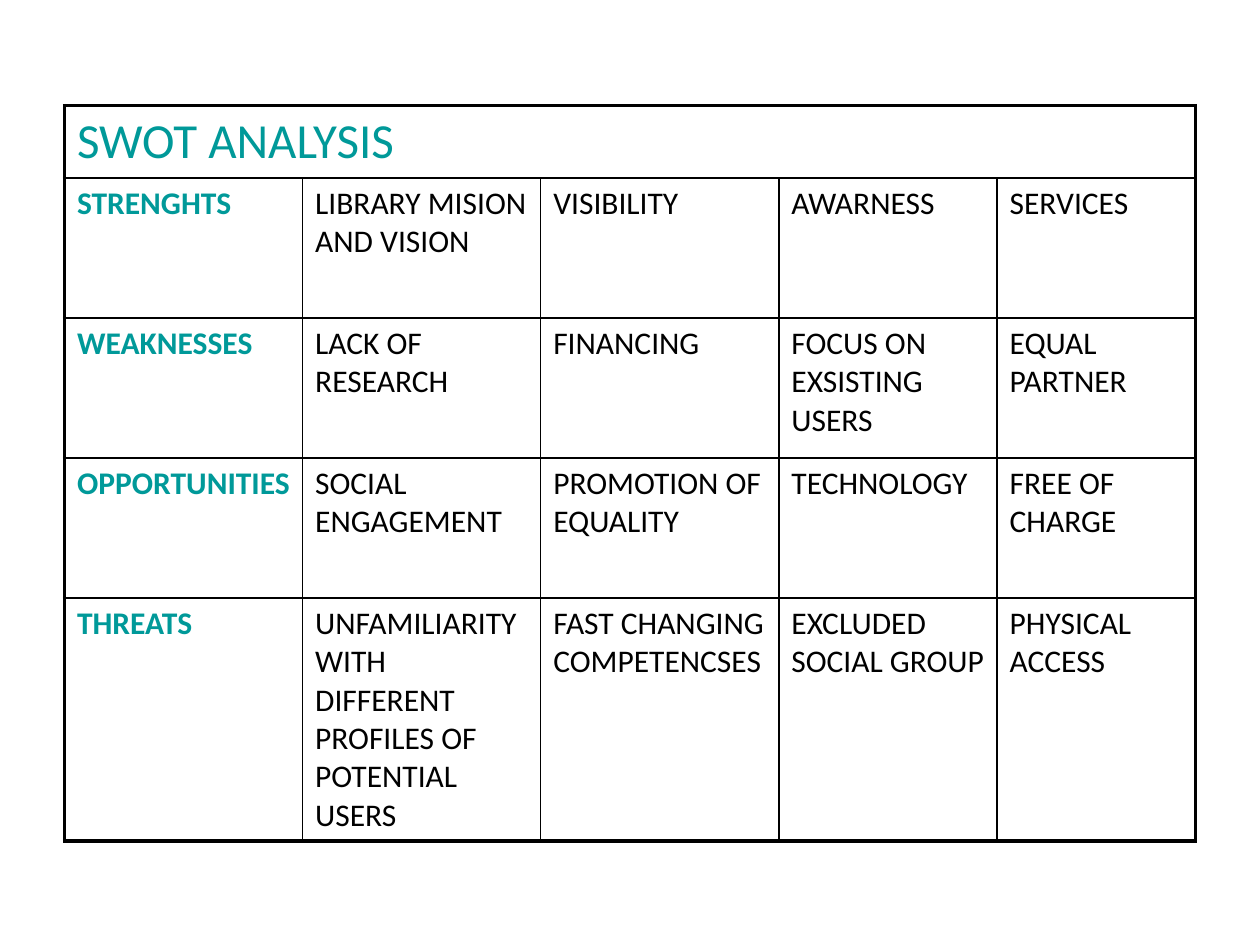
from dataclasses import dataclass

from lxml.etree import SubElement
from pptx import Presentation
from pptx.dml.color import RGBColor
from pptx.oxml.ns import qn
from pptx.table import Table, _Cell
from pptx.util import Cm, Pt

COLOURS = {"heading": "009999", "body": "000000", "border": "000000"}
FONT = "Calibri"
COLUMN_WIDTHS = [4.8, 4.8, 4.8, 4.4, 4.0]
ROW_HEIGHTS = [1.4, 2.82, 2.82, 2.82, 4.9]
OUTER_LINE, INNER_LINE = 2.25, 1


@dataclass(frozen=True)
class TextStyle:
    size: int
    colour: str
    bold: bool = False


@dataclass(frozen=True)
class SwotRow:
    heading: str
    points: tuple[str, ...]


TITLE = TextStyle(28, "heading")
HEADING = TextStyle(18, "heading", bold=True)
BODY = TextStyle(18, "body")

SWOT_ROWS = [
    SwotRow("STRENGHTS", ("LIBRARY MISION AND VISION", "VISIBILITY", "AWARNESS", "SERVICES")),
    SwotRow("WEAKNESSES", ("LACK OF RESEARCH", "FINANCING", "FOCUS ON EXSISTING USERS", "EQUAL PARTNER")),
    SwotRow("OPPORTUNITIES", ("SOCIAL ENGAGEMENT", "PROMOTION OF EQUALITY", "TECHNOLOGY", "FREE OF CHARGE")),
    SwotRow("THREATS", (
        "UNFAMILIARITY WITH DIFFERENT PROFILES OF POTENTIAL USERS",
        "FAST CHANGING COMPETENCSES",
        "EXCLUDED SOCIAL GROUP",
        "PHYSICAL ACCESS",
    )),
]


def write_cell(cell: _Cell, text: str, style: TextStyle) -> None:
    para = cell.text_frame.paragraphs[0]
    spacing = SubElement(para._p.get_or_add_pPr(), qn("a:spcBef"))
    SubElement(spacing, qn("a:spcPct"), val="20000")
    span = para.add_run()
    span.text = text
    span.font.name = FONT
    span.font.size = Pt(style.size)
    span.font.bold = style.bold
    span.font.color.rgb = RGBColor.from_string(COLOURS[style.colour])


def draw_borders(cell: _Cell, outer_sides: dict[str, bool]) -> None:
    properties = cell._tc.get_or_add_tcPr()
    for side, outer in outer_sides.items():
        width = Pt(OUTER_LINE if outer else INNER_LINE)
        line = SubElement(properties, qn(f"a:ln{side}"), w=str(width))
        fill = SubElement(line, qn("a:solidFill"))
        SubElement(fill, qn("a:srgbClr"), val=COLOURS["border"])


def format_grid(table: Table) -> None:
    last_row, last_column = len(ROW_HEIGHTS) - 1, len(COLUMN_WIDTHS) - 1
    for column, width in zip(table.columns, COLUMN_WIDTHS):
        column.width = Cm(width)
    for row_index, (row, height) in enumerate(zip(table.rows, ROW_HEIGHTS)):
        row.height = Cm(height)
        for column_index, cell in enumerate(row.cells):
            draw_borders(cell, {
                "L": column_index == 0,
                "R": column_index == last_column or cell.is_merge_origin,
                "T": row_index == 0,
                "B": row_index == last_row,
            })
            cell.fill.background()


def add_swot_table(page) -> None:
    frame = page.shapes.add_table(
        len(ROW_HEIGHTS), len(COLUMN_WIDTHS),
        Cm(1.3), Cm(2.13), Cm(sum(COLUMN_WIDTHS)), Cm(sum(ROW_HEIGHTS)),
    )
    table = frame.table
    table.first_row = False
    table.horz_banding = False
    table.cell(0, 0).merge(table.cell(0, len(COLUMN_WIDTHS) - 1))
    format_grid(table)
    write_cell(table.cell(0, 0), "SWOT ANALYSIS", TITLE)
    for row_index, swot in enumerate(SWOT_ROWS, start=1):
        write_cell(table.cell(row_index, 0), swot.heading, HEADING)
        for column_index, point in enumerate(swot.points, start=1):
            write_cell(table.cell(row_index, column_index), point, BODY)


def main() -> None:
    deck = Presentation()
    deck.slide_width = Cm(25.4)
    deck.slide_height = Cm(19.05)
    page = deck.slides.add_slide(deck.slide_layouts[6])
    add_swot_table(page)
    deck.save("out.pptx")


if __name__ == "__main__":
    main()
